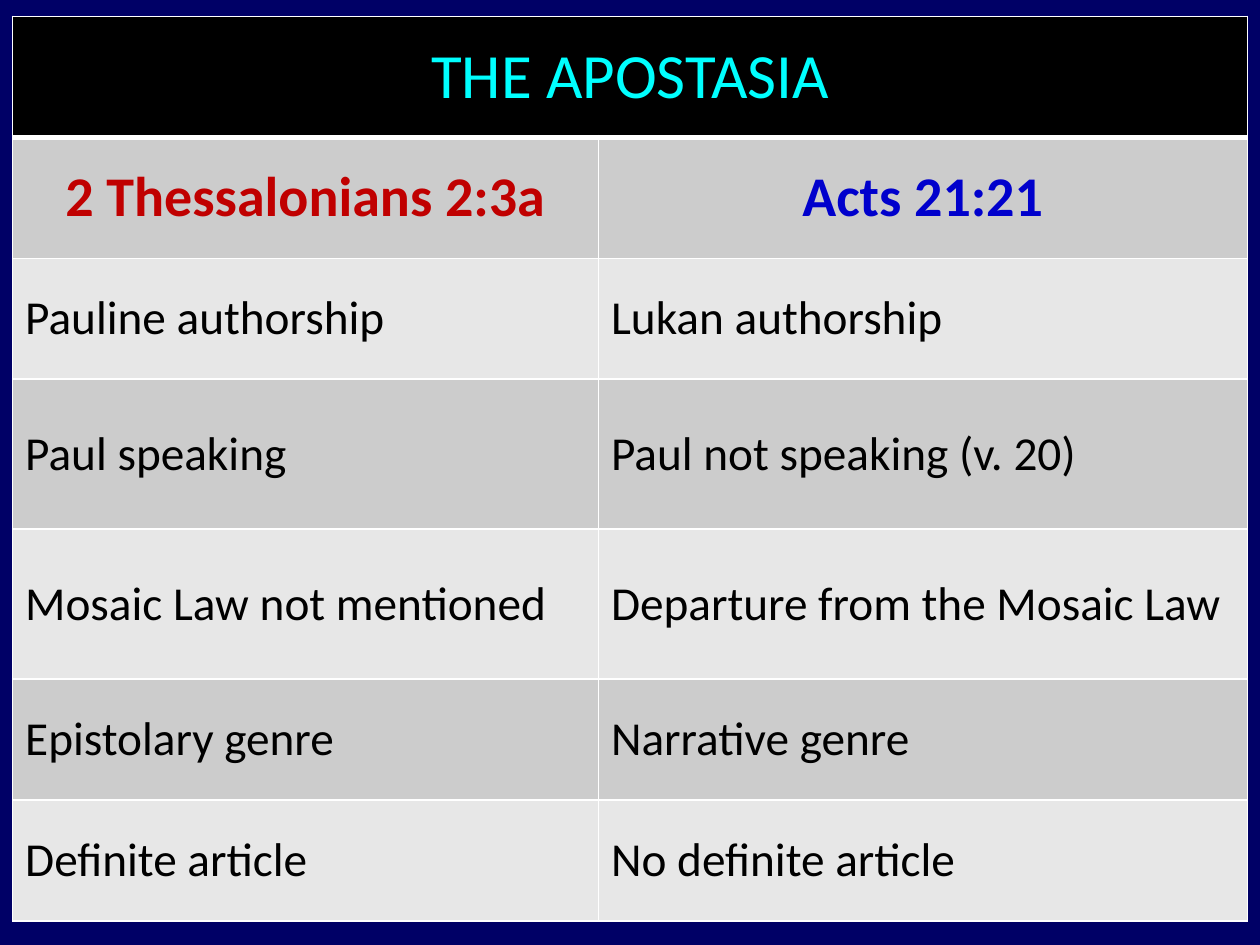
"""Build a slide with a table comparing two passages on the apostasia."""
from dataclasses import dataclass

from lxml.etree import SubElement
from pptx import Presentation
from pptx.dml.color import RGBColor
from pptx.enum.text import MSO_ANCHOR, PP_ALIGN
from pptx.oxml.ns import qn
from pptx.table import _Cell
from pptx.util import Pt

NAVY, BLACK, WHITE, CYAN = "000066", "000000", "FFFFFF", "00FFFF"
RED, BLUE = "C00000", "0000CC"
BANDS = ("CCCCCC", "E7E7E7")
COLUMN_WIDTHS = (334.8, 370.8)
LOW_ROW, TALL_ROW = 69.12, 85.68
THIN, THICK = 1, 3


@dataclass(frozen=True)
class Comparison:
    """One row setting the two passages side by side."""

    thessalonians: str
    acts: str
    height: float = LOW_ROW


PASSAGES = Comparison("2 Thessalonians 2:3a", "Acts 21:21")
COMPARISONS = (
    Comparison("Pauline authorship", "Lukan authorship"),
    Comparison("Paul speaking", "Paul not speaking (v. 20)", TALL_ROW),
    Comparison("Mosaic Law not mentioned", "Departure from the Mosaic Law", TALL_ROW),
    Comparison("Epistolary genre", "Narrative genre"),
    Comparison("Definite article", "No definite article"),
)


def rgb(value: str) -> RGBColor:
    """Turn a hex string into a colour."""
    return RGBColor.from_string(value)


def write(cell: _Cell, text: str, *, size: float = 27, color: str = BLACK,
          bold: bool = False, align: PP_ALIGN = PP_ALIGN.LEFT) -> None:
    """Put formatted text into a cell."""
    cell.vertical_anchor = MSO_ANCHOR.MIDDLE
    paragraph = cell.text_frame.paragraphs[0]
    paragraph.alignment = align
    run = paragraph.add_run()
    run.text = text
    run.font.name = "Calibri"
    run.font.size = Pt(size)
    run.font.bold = bold
    run.font.color.rgb = rgb(color)


def paint(cell: _Cell, fill: str, top: float = THIN, bottom: float = THIN) -> None:
    """Give a cell white borders and a solid fill."""
    properties = cell._tc.get_or_add_tcPr()
    for side, width in (("L", THIN), ("R", THIN), ("T", top), ("B", bottom)):
        border = SubElement(properties, qn(f"a:ln{side}"), w=str(Pt(width)))
        solid = SubElement(border, qn("a:solidFill"))
        SubElement(solid, qn("a:srgbClr"), val=WHITE)
    cell.fill.solid()
    cell.fill.fore_color.rgb = rgb(fill)


def main() -> None:
    """Create the slide and save it."""
    deck = Presentation()
    deck.slide_width, deck.slide_height = Pt(720), Pt(540)
    slide = deck.slides.add_slide(deck.slide_layouts[6])
    slide.background.fill.solid()
    slide.background.fill.fore_color.rgb = rgb(NAVY)

    heights = [LOW_ROW, PASSAGES.height, *(row.height for row in COMPARISONS)]
    table = slide.shapes.add_table(
        len(heights), len(COLUMN_WIDTHS), Pt(7.2), Pt(9.36),
        Pt(sum(COLUMN_WIDTHS)), Pt(sum(heights))).table
    for column, width in zip(table.columns, COLUMN_WIDTHS):
        column.width = Pt(width)
    for row, height in zip(table.rows, heights):
        row.height = Pt(height)

    heading = table.cell(0, 0)
    heading.merge(table.cell(0, 1))
    for cell in table.rows[0].cells:
        paint(cell, BLACK, bottom=THICK)
    write(heading, "THE APOSTASIA", size=36, color=CYAN, align=PP_ALIGN.CENTER)

    passage_cells = table.rows[1].cells
    for cell, passage, color in zip(
            passage_cells, (PASSAGES.thessalonians, PASSAGES.acts), (RED, BLUE)):
        paint(cell, BANDS[0], top=THICK)
        write(cell, passage, size=32, color=color, bold=True, align=PP_ALIGN.CENTER)

    for index, comparison in enumerate(COMPARISONS, start=1):
        cells = table.rows[index + 1].cells
        for cell, text in zip(cells, (comparison.thessalonians, comparison.acts)):
            paint(cell, BANDS[index % 2])
            write(cell, text)

    deck.save("out.pptx")


if __name__ == "__main__":
    main()
